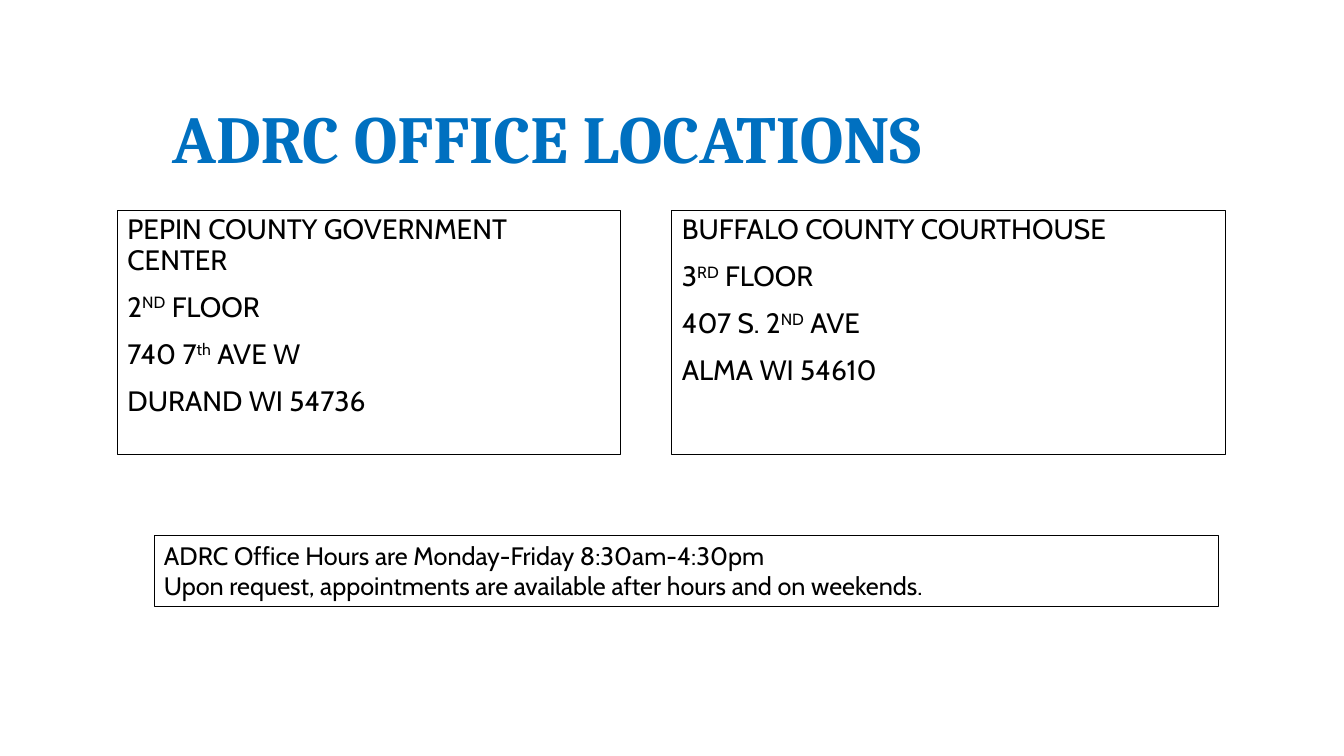
from pptx import Presentation
from pptx.dml.color import RGBColor
from pptx.enum.shapes import MSO_SHAPE
from pptx.enum.text import MSO_ANCHOR, PP_ALIGN
from pptx.util import Pt

BLACK = RGBColor(0x00, 0x00, 0x00)
BLUE = RGBColor(0x00, 0x70, 0xC0)

TITLE_FORMAT = {"name": "Cambria", "size": Pt(48), "bold": True}
ADDRESS_FORMAT = {"name": "Cabin", "size": Pt(20)}
HOURS_FORMAT = {"name": "Cabin", "size": Pt(18)}

# Each line is a list of runs; every second run is superscript.
PEPIN_LINES = [
    ["PEPIN COUNTY GOVERNMENT CENTER"],
    ["2", "ND", " FLOOR"],
    ["740 7", "th", " AVE W"],
    ["DURAND WI 54736"],
]
BUFFALO_LINES = [
    ["BUFFALO COUNTY COURTHOUSE"],
    ["3", "RD", " FLOOR"],
    ["407 S. 2", "ND", " AVE"],
    ["ALMA WI 54610"],
]
HOURS_LINES = [
    ["ADRC Office Hours are Monday-Friday 8:30am-4:30pm"],
    ["Upon request, appointments are available after hours and on weekends."],
]


def format_font(font, settings, color):
    for name, value in settings.items():
        setattr(font, name, value)
    font.color.rgb = color


def add_title(slide, left, top, width, height):
    title = slide.shapes.title
    title.left, title.top, title.width, title.height = left, top, width, height
    frame = title.text_frame
    frame.text = "ADRC OFFICE LOCATIONS"
    frame.vertical_anchor = MSO_ANCHOR.MIDDLE
    frame.margin_left = Pt(39)
    paragraph = frame.paragraphs[0]
    paragraph.alignment = PP_ALIGN.LEFT
    paragraph.line_spacing = 0.9
    format_font(paragraph.runs[0].font, TITLE_FORMAT, BLUE)


def add_outlined_text(slide, box, lines, settings, line_spacing=1.0, gap=Pt(0)):
    shape = slide.shapes.add_shape(MSO_SHAPE.RECTANGLE, *box)
    shape.shadow.inherit = False
    shape.fill.background()
    shape.line.color.rgb = BLACK
    shape.line.width = Pt(0.75)
    frame = shape.text_frame
    frame.word_wrap = True
    frame.vertical_anchor = MSO_ANCHOR.TOP
    for index, line in enumerate(lines):
        paragraph = frame.add_paragraph() if index else frame.paragraphs[0]
        paragraph.alignment = PP_ALIGN.LEFT
        paragraph.line_spacing = line_spacing
        paragraph.space_before = gap if index else Pt(0)
        for position, text in enumerate(line):
            run = paragraph.add_run()
            run.text = text
            format_font(run.font, settings, BLACK)
            if position % 2:
                run._r.get_or_add_rPr().set("baseline", "30000")


def add_addresses(slide, left, top, width, height):
    """Place the two office addresses side by side in the given box."""
    gutter = Pt(36.5)
    pepin_width = Pt(359.5)
    buffalo_left = left + pepin_width + gutter
    buffalo_width = width - pepin_width - gutter
    for box_left, box_width, lines in (
        (left, pepin_width, PEPIN_LINES),
        (buffalo_left, buffalo_width, BUFFALO_LINES),
    ):
        box = (box_left, top, box_width, height)
        add_outlined_text(slide, box, lines, ADDRESS_FORMAT, 0.9, Pt(12))


def main():
    presentation = Presentation()
    presentation.slide_width, presentation.slide_height = Pt(960), Pt(540)
    slide = presentation.slides.add_slide(presentation.slide_layouts[5])
    add_title(slide, Pt(84), Pt(38), Pt(792), Pt(127))
    add_addresses(slide, Pt(84), Pt(150.5), Pt(791.5), Pt(174))
    hours_box = (Pt(110), Pt(382.5), Pt(760.5), Pt(51))
    add_outlined_text(slide, hours_box, HOURS_LINES, HOURS_FORMAT)
    presentation.save("out.pptx")


if __name__ == "__main__":
    main()
